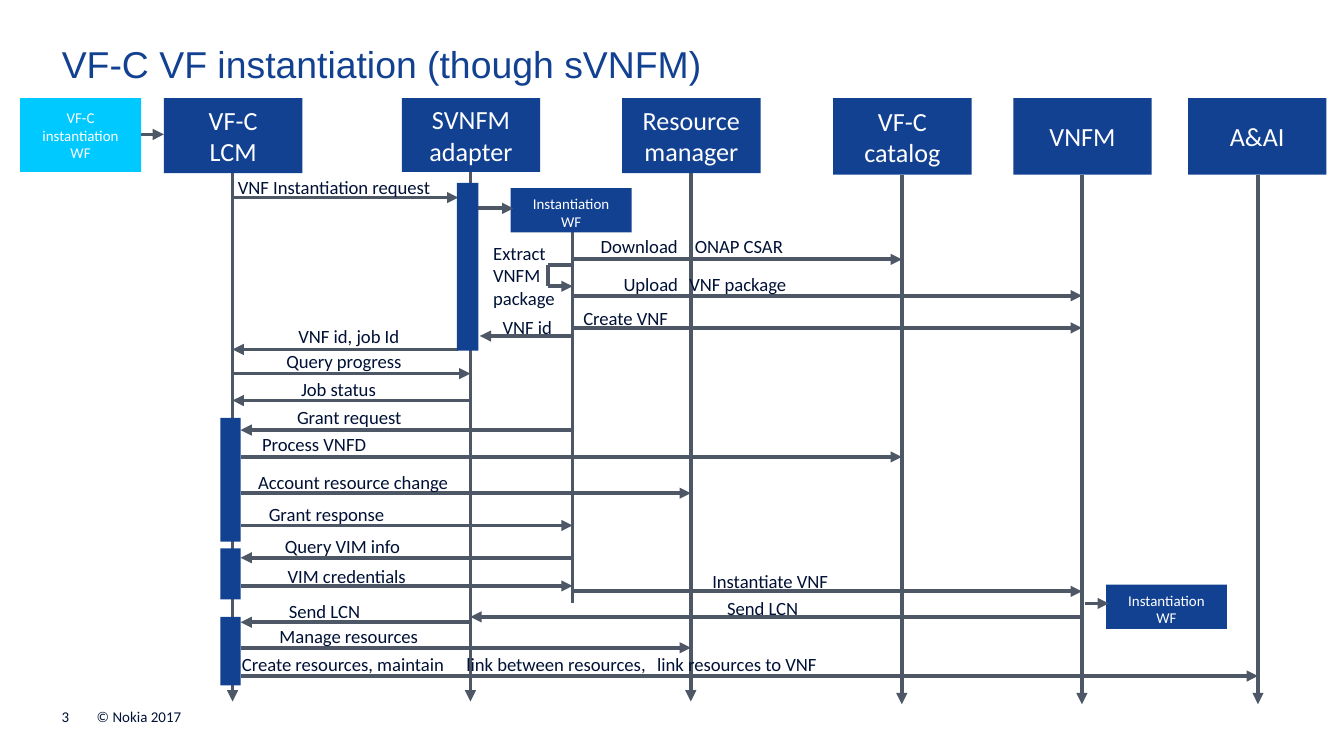
from dataclasses import dataclass

from lxml import etree
from pptx import Presentation
from pptx.dml.color import RGBColor
from pptx.enum.shapes import MSO_CONNECTOR, MSO_SHAPE
from pptx.enum.text import MSO_ANCHOR, MSO_AUTO_SIZE, PP_ALIGN
from pptx.oxml.ns import qn
from pptx.util import Inches, Pt

STRAIGHT = MSO_CONNECTOR.STRAIGHT
RECTANGLE = MSO_SHAPE.RECTANGLE
LEFT, CENTER = PP_ALIGN.LEFT, PP_ALIGN.CENTER
TOP, MIDDLE, BOTTOM = MSO_ANCHOR.TOP, MSO_ANCHOR.MIDDLE, MSO_ANCHOR.BOTTOM
TITLE_ONLY = 5


@dataclass(frozen=True)
class Theme:
    blue: str = "124191"
    cyan: str = "00C9FF"
    grey: str = "4D5766"
    ink: str = "001135"
    white: str = "FFFFFF"
    title_font: str = "Arial"
    body_font: str = "Calibri"
    title_size: int = 20
    head_size: int = 14
    label_size: int = 10
    small_size: int = 8
    line_width: int = 2


THEME = Theme()

# Horizontal positions where messages may start or end
COLUMNS = {
    "lcm": 1.73, "lcm bar": 1.79, "adapter bar": 3.41, "adapter bar right": 3.57,
    "adapter": 3.5, "workflow": 4.26, "resource": 5.14,
    "catalog": 6.71, "vnfm": 8.05, "aai": 9.36,
}
HEAD_TOP, HEAD_WIDTH = 0.73, 1.03
LABEL_HEIGHT = 0.33

# Column, heading, heading left, heading height, end of lifeline
PARTICIPANTS = [
    ("lcm", "VF-C\nLCM", 1.22, 0.56, 5.22),
    ("adapter", "SVNFM\nadapter", 2.99, 0.55, 5.22),
    ("resource", "Resource\nmanager", 4.63, 0.56, 5.22),
    ("catalog", "VF-C\ncatalog", 6.2, 0.57, 5.24),
    ("vnfm", "VNFM", 7.54, 0.57, 5.24),
    ("aai", "A&AI", 8.84, 0.57, 5.24),
]

# Row, sender, receiver, label (left, top, width), label text, tab stops
MESSAGES = [
    (1.47, "lcm", "adapter bar", (1.69, 1.23, 1.78), "VNF Instantiation request", ()),
    (1.93, "workflow", "catalog", (4.39, 1.67, 1.9), "Download\tONAP CSAR", (0.7,)),
    (2.2, "workflow", "vnfm", (4.56, 1.95, 1.9), "Upload\tVNF package", (0.49,)),
    (2.44, "workflow", "vnfm", (4.26, 2.2, 0.95), "Create VNF", ()),
    (2.5, "workflow", "adapter bar right", (3.66, 2.27, 0.6), "VNF id", ()),
    (2.6, "adapter bar", "lcm", (2.14, 2.34, 0.99), "VNF id, job Id", ()),
    (2.78, "lcm", "adapter", (2.05, 2.52, 1.32), "Query progress", ()),
    (2.98, "adapter", "lcm", (2.16, 2.73, 0.99), "Job status", ()),
    (3.2, "workflow", "lcm bar", (2.13, 2.94, 1.32), "Grant request", ()),
    (3.4, "lcm bar", "catalog", (1.87, 3.14, 1.03), "Process VNFD", ()),
    (3.67, "lcm bar", "resource", (1.84, 3.42, 1.82), "Account resource change", ()),
    (3.91, "lcm bar", "workflow", (1.92, 3.66, 1.18), "Grant response", ()),
    (4.15, "workflow", "lcm bar", (2.04, 3.9, 1.32), "Query VIM info", ()),
    (4.36, "lcm bar", "workflow", (2.06, 4.12, 1.32), "VIM credentials", ()),
    (4.4, "workflow", "vnfm", (5.22, 4.16, 1.9), "Instantiate VNF", ()),
    (4.59, "vnfm", "adapter", (5.33, 4.36, 1.9), "Send LCN", ()),
    (4.63, "adapter", "lcm bar", (2.07, 4.38, 1.32), "Send LCN", ()),
    (4.82, "lcm bar", "resource", (2, 4.57, 1.36), "Manage resources", ()),
    (5.03, "lcm bar", "aai", (1.72, 4.78, 4.96),
     "Create resources, maintain\tlink between resources,\tlink resources to VNF",
     (1.67, 3.09)),
]

# Left, top, width, height
ACTIVATIONS = [
    (3.4, 1.36, 0.16, 1.25),
    (1.64, 3.11, 0.15, 0.92),
    (1.64, 4.08, 0.15, 0.38),
    (1.64, 4.59, 0.15, 0.51),
]


def color(value):
    return RGBColor.from_string(value)


def write_text(shape, text, *, size, ink=THEME.ink, font=THEME.body_font,
               align=LEFT, anchor=TOP, insets=(0, 0), tabs=()):
    """Fill a shape with one paragraph per line; insets are (sides, top and bottom)."""
    frame = shape.text_frame
    frame.word_wrap = True
    frame.auto_size = MSO_AUTO_SIZE.NONE
    frame.vertical_anchor = anchor
    frame.margin_left = frame.margin_right = Inches(insets[0])
    frame.margin_top = frame.margin_bottom = Inches(insets[1])
    for index, line in enumerate(text.split("\n")):
        paragraph = frame.add_paragraph() if index else frame.paragraphs[0]
        paragraph.alignment = align
        if tabs:
            properties = paragraph._p.get_or_add_pPr()
            tab_list = etree.SubElement(properties, qn("a:tabLst"))
            for stop in tabs:
                etree.SubElement(tab_list, qn("a:tab"), pos=str(Inches(stop)), algn="l")
        run = paragraph.add_run()
        run.text = line
        run.font.name = font
        run.font.size = Pt(size)
        run.font.color.rgb = color(ink)


def add_text(slide, box, text, **text_format):
    shape = slide.shapes.add_textbox(*map(Inches, box))
    write_text(shape, text, **text_format)


def add_label(slide, place, text, height=LABEL_HEIGHT, tabs=()):
    add_text(slide, (*place, height), text,
             size=THEME.label_size, insets=(0.08, 0.08), tabs=tabs)


def add_box(slide, box, text="", fill=THEME.blue, size=THEME.small_size, anchor=MIDDLE):
    shape = slide.shapes.add_shape(RECTANGLE, *map(Inches, box))
    shape.shadow.inherit = False
    shape.fill.solid()
    shape.fill.fore_color.rgb = color(fill)
    shape.line.fill.background()
    if text:
        write_text(shape, text, size=size, ink=THEME.white, align=CENTER,
                   anchor=anchor, insets=(0.1, 0.05))


def add_line(slide, start, end, arrow=True):
    connector = slide.shapes.add_connector(STRAIGHT, *map(Inches, (*start, *end)))
    connector.line.color.rgb = color(THEME.grey)
    connector.line.width = Pt(THEME.line_width)
    properties = connector._element.spPr
    if arrow:
        etree.SubElement(properties.find(qn("a:ln")), qn("a:tailEnd"), type="triangle")
    etree.SubElement(properties, qn("a:effectLst"))


def add_participant(slide, column, heading, left, height, end):
    x = COLUMNS[column]
    add_line(slide, (x, HEAD_TOP + height), (x, end))
    add_box(slide, (left, HEAD_TOP, HEAD_WIDTH, height), heading, size=THEME.head_size)


def add_message(slide, row, sender, receiver, place, text, tabs):
    add_line(slide, (COLUMNS[sender], row), (COLUMNS[receiver], row))
    add_label(slide, place, text, tabs=tabs)


def add_workflows(slide):
    add_box(slide, (0.15, HEAD_TOP, 0.9, 0.55), "VF-C\ninstantiation\nWF", fill=THEME.cyan)
    add_line(slide, (1.05, 1), (1.22, 1))
    for left, top, start, row in ((3.8, 1.4, 3.51, 1.55), (8.23, 4.35, 8.07, 4.49)):
        add_box(slide, (left, top, 0.9, 0.33), "Instantiation\nWF", anchor=TOP)
        add_line(slide, (start, row), (left + 0.02, row))


def add_extract_loop(slide):
    workflow, turn, top, bottom = COLUMNS["workflow"], 4.08, 1.97, 2.13
    add_line(slide, (workflow, top), (turn, top), arrow=False)
    add_line(slide, (turn, top), (turn, bottom), arrow=False)
    add_line(slide, (turn, bottom), (workflow, bottom))
    add_label(slide, (3.59, 1.72, 0.74), "Extract\nVNFM\npackage", height=2 * LABEL_HEIGHT)


def add_title(slide, text):
    title = slide.shapes.title
    title.left, title.top, title.width, title.height = map(Inches, (0.46, 0.31, 9.09, 0.34))
    write_text(title, text, size=THEME.title_size, ink=THEME.blue, font=THEME.title_font)


def main():
    presentation = Presentation()
    presentation.slide_width = Inches(10)
    presentation.slide_height = presentation.slide_width * 9 // 16
    slide = presentation.slides.add_slide(presentation.slide_layouts[TITLE_ONLY])

    add_title(slide, "VF-C VF instantiation (though sVNFM)")
    for participant in PARTICIPANTS:
        add_participant(slide, *participant)
    workflow = COLUMNS["workflow"]
    add_line(slide, (workflow, 1.73), (workflow, 4.49), arrow=False)
    for message in MESSAGES:
        add_message(slide, *message)
    add_extract_loop(slide)
    add_workflows(slide)
    for activation in ACTIVATIONS:
        add_box(slide, activation)
    for left, width, text in ((0.46, 0.16, "3"), (0.72, 1.97, "© Nokia 2017")):
        add_text(slide, (left, 5.27, width, 0.13), text, size=THEME.small_size, anchor=BOTTOM)

    presentation.save("out.pptx")


if __name__ == "__main__":
    main()
